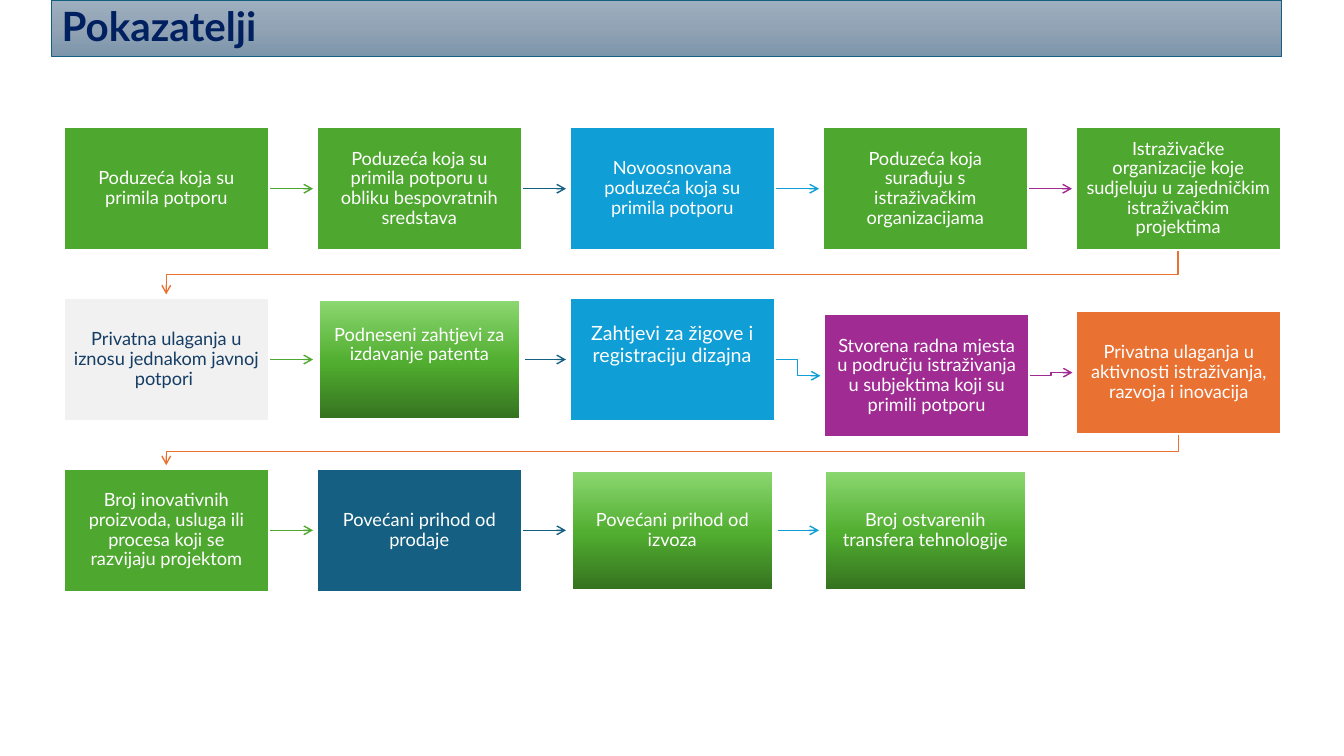
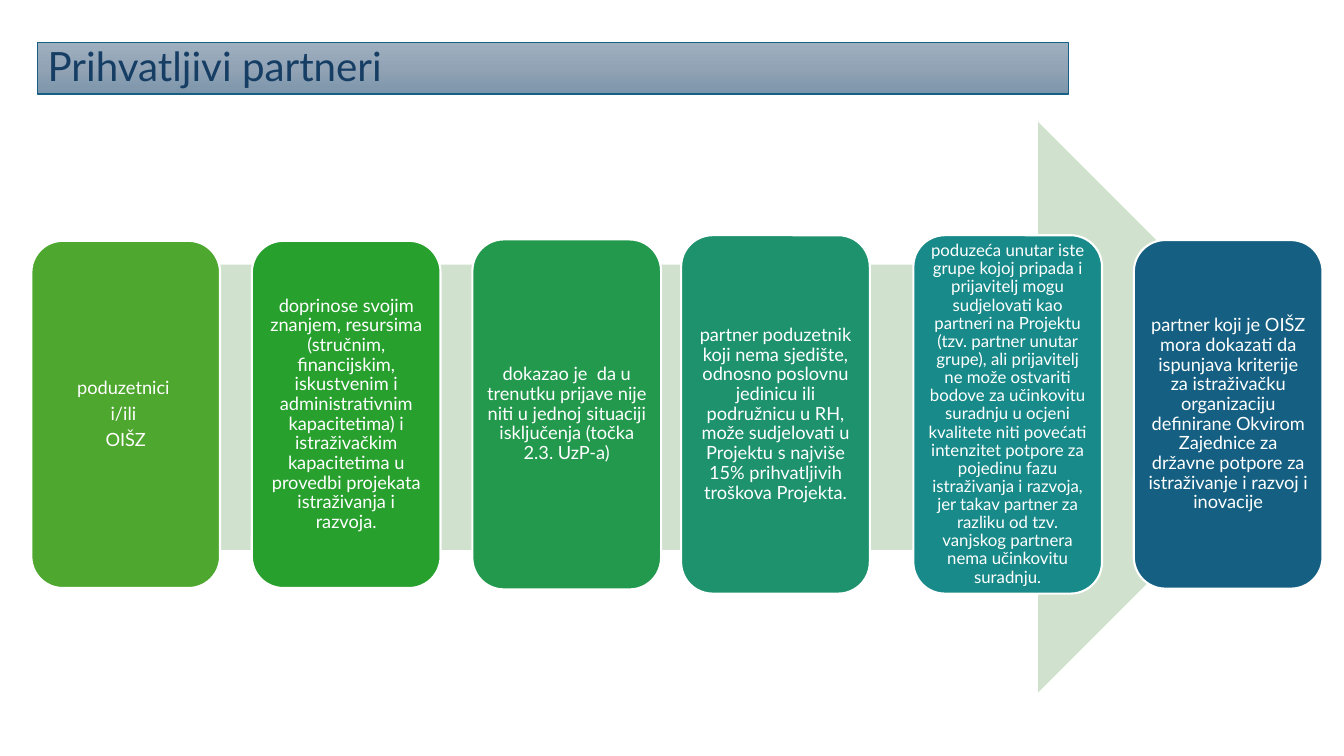
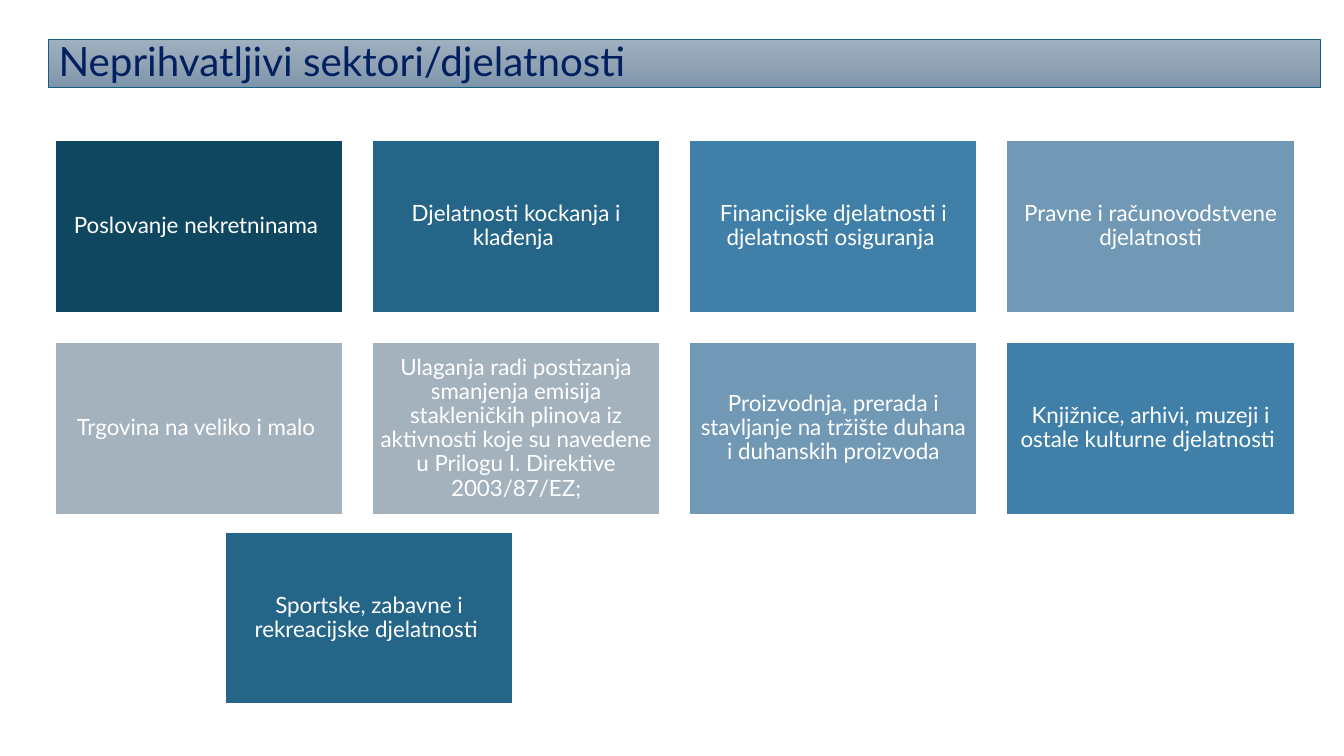
from dataclasses import dataclass

from lxml.etree import SubElement
from pptx import Presentation
from pptx.dml.color import RGBColor
from pptx.enum.shapes import MSO_CONNECTOR, MSO_SHAPE
from pptx.enum.text import MSO_ANCHOR, MSO_AUTO_SIZE, PP_ALIGN
from pptx.oxml.ns import qn
from pptx.util import Pt

FONT = "Lato"
WHITE, NAVY, DARK_BLUE = "FFFFFF", "002060", "163E64"
GREEN, BLUE, SKY = "4EA72E", "156082", "0F9ED5"
PURPLE, ORANGE, PALE = "A02B93", "E97132", "F1F1F1"

# Vertical gradients, listed from top to bottom
Gradient = tuple[tuple[int, str], ...]
TITLE_BAND: Gradient = ((0, "9EAFBF"), (50, "91A3B4"), (100, "7C95AB"))
LEAF: Gradient = ((0, "8ED973"), (52, "51AE30"), (100, "34701F"))


@dataclass(frozen=True)
class Frame:
    left: float
    top: float
    width: float
    height: float

    @property
    def right(self) -> float:
        return self.left + self.width

    @property
    def bottom(self) -> float:
        return self.top + self.height

    @property
    def center(self) -> float:
        return self.left + self.width / 2

    @property
    def middle(self) -> float:
        return self.top + self.height / 2

    def emu(self) -> tuple[Pt, Pt, Pt, Pt]:
        return Pt(self.left), Pt(self.top), Pt(self.width), Pt(self.height)


@dataclass(frozen=True)
class Box:
    text: str
    fill: str | Gradient
    size: float = 13
    ink: str = WHITE
    border: float = 1.5
    inset: float = 7.2
    lift: float = 0  # extra bottom inset that raises the text


@dataclass(frozen=True)
class Step:
    box: Box
    arrow: str | None
    dx: float = 0
    dy: float = 0


@dataclass(frozen=True)
class Card:
    text: str
    fill: str
    height: float
    size: float = 13
    dx: float = 0


def rgb(color: str) -> RGBColor:
    return RGBColor.from_string(color)


def paint(shape, fill: str | Gradient) -> None:
    if isinstance(fill, str):
        shape.fill.solid()
        shape.fill.fore_color.rgb = rgb(fill)
        return
    shape.fill.gradient()
    shape.fill.gradient_angle = 270
    stops = shape.element.spPr.find(".//" + qn("a:gsLst"))
    for stop in list(stops):
        stops.remove(stop)
    for position, color in fill:
        stop = SubElement(stops, qn("a:gs"), pos=str(position * 1000))
        SubElement(stop, qn("a:srgbClr"), val=color)


def outline(shape, color: str, width: float) -> None:
    shape.line.color.rgb = rgb(color)
    shape.line.width = Pt(width)


def write(shape, text: str, size: float, ink: str, align: PP_ALIGN,
          bold: bool = False) -> None:
    frame = shape.text_frame
    frame.word_wrap = True
    frame.auto_size = MSO_AUTO_SIZE.NONE
    frame.vertical_anchor = MSO_ANCHOR.MIDDLE
    for index, line in enumerate(text.split("\n")):
        paragraph = frame.add_paragraph() if index else frame.paragraphs[0]
        paragraph.alignment = align
        paragraph.line_spacing = 0.9
        paragraph.space_before = Pt(0)
        paragraph.space_after = Pt(round(size * 0.35, 2))
        run = paragraph.add_run()
        run.text = line
        run.font.name = FONT
        run.font.size = Pt(size)
        run.font.bold = bold
        run.font.color.rgb = rgb(ink)


def titled_slide(deck, text: str, band: Frame, ink: str = NAVY, bold: bool = False):
    slide = deck.slides.add_slide(deck.slide_layouts[5])
    title = slide.shapes.title
    title.left, title.top, title.width, title.height = band.emu()
    paint(title, TITLE_BAND)
    outline(title, BLUE, 1)
    write(title, text, 28.8, ink, PP_ALIGN.LEFT, bold)
    return slide


def draw_box(slide, box: Box, frame: Frame, kind: MSO_SHAPE = MSO_SHAPE.RECTANGLE):
    shape = slide.shapes.add_shape(kind, *frame.emu())
    shape.shadow.inherit = False
    paint(shape, box.fill)
    outline(shape, WHITE, box.border)
    text = shape.text_frame
    text.margin_left = text.margin_right = text.margin_top = Pt(box.inset)
    text.margin_bottom = Pt(box.inset + box.lift)
    write(shape, box.text, box.size, box.ink, PP_ALIGN.CENTER)
    return shape


def style_arrow(arrow, color: str) -> None:
    outline(arrow, color, 1)
    properties = arrow.element.spPr
    SubElement(properties.find(qn("a:ln")), qn("a:tailEnd"), type="arrow")
    SubElement(properties, qn("a:effectLst"))


ARROW_GAP = 2.5


def side_arrow(slide, start: Frame, end: Frame, color: str):
    """Arrow to the next box in the row, bent when the boxes are not level."""
    level = start.middle == end.middle
    kind = MSO_CONNECTOR.STRAIGHT if level else MSO_CONNECTOR.ELBOW
    arrow = slide.shapes.add_connector(
        kind, Pt(start.right), Pt(start.middle),
        Pt(end.left - ARROW_GAP), Pt(end.middle))
    style_arrow(arrow, color)
    return arrow if level else None


def wrap_arrow(slide, start: Frame, end: Frame, color: str) -> None:
    """Arrow from the end of one row to the start of the next."""
    tip = end.top - ARROW_GAP
    turn = start.bottom + 0.55 * (tip - start.bottom)
    route = slide.shapes.build_freeform(Pt(start.center), Pt(start.bottom))
    corners = ((start.center, turn), (end.center, turn), (end.center, tip))
    route.add_line_segments([(Pt(x), Pt(y)) for x, y in corners], close=False)
    arrow = route.convert_to_shape()
    arrow.fill.background()
    style_arrow(arrow, color)


# Slide 1: indicators
STEPS_PER_ROW = 5
STEPS = (
    Step(Box("Poduzeća koja su primila potporu", GREEN), GREEN),
    Step(Box("Poduzeća koja su primila potporu u obliku bespovratnih sredstava",
             GREEN), BLUE),
    Step(Box("Novoosnovana poduzeća koja su primila potporu", SKY), SKY),
    Step(Box("Poduzeća koja surađuju s istraživačkim organizacijama", GREEN), PURPLE),
    Step(Box("Istraživačke organizacije koje sudjeluju u zajedničkim "
             "istraživačkim projektima", GREEN), ORANGE),
    Step(Box("Privatna ulaganja u iznosu jednakom javnoj potpori ", PALE,
             ink=DARK_BLUE), GREEN),
    Step(Box("Podneseni zahtjevi za izdavanje patenta", LEAF, border=4.5, lift=20.5),
         BLUE),
    Step(Box("Zahtjevi za žigove i registraciju dizajna", SKY, size=14, lift=20.5),
         SKY),
    Step(Box("Stvorena radna mjesta u području istraživanja u subjektima koji su "
             "primili potporu", PURPLE), PURPLE, dx=1, dy=11.6),
    Step(Box("Privatna ulaganja u aktivnosti istraživanja, razvoja i inovacija",
             ORANGE), ORANGE, dx=0.4, dy=9.4),
    Step(Box("Broj inovativnih proizvoda, usluga ili procesa koji se razvijaju "
             "projektom", GREEN), GREEN),
    Step(Box("Povećani prihod od prodaje", BLUE), BLUE),
    Step(Box("Povećani prihod od izvoza", LEAF, border=4.5), SKY),
    Step(Box("Broj ostvarenih transfera tehnologije", LEAF, border=4.5), None),
)


def indicators(deck) -> None:
    slide = titled_slide(deck, "Pokazatelji", Frame(36.9, 0, 878.5, 40.5), bold=True)
    frames = []
    for index, step in enumerate(STEPS):
        row, column = divmod(index, STEPS_PER_ROW)
        frames.append(Frame(45.4 + 180.7 * column + step.dx,
                            90.8 + 122 * row + step.dy, 146.7, 88))
    for index, (step, frame) in enumerate(zip(STEPS, frames)):
        straight = None
        if step.arrow and (index + 1) % STEPS_PER_ROW:
            straight = side_arrow(slide, frame, frames[index + 1], step.arrow)
        elif step.arrow:
            wrap_arrow(slide, frame, frames[index + 1], step.arrow)
        shape = draw_box(slide, step.box, frame)
        if straight is not None:
            straight.begin_connect(shape, 3)


# Slide 2: eligible partners
CARDS = (
    Card("poduzetnici \ni/ili \nOIŠZ", GREEN, 248),
    Card("doprinose svojim znanjem, resursima (stručnim, financijskim, iskustvenim i "
         "administrativnim kapacitetima) i istraživačkim kapacitetima u provedbi "
         "projekata istraživanja i razvoja.", "28A02E", 248),
    Card("dokazao je  da u trenutku prijave nije niti u jednoj situaciji isključenja "
         "(točka 2.3. UzP-a)", "23994E", 250),
    Card("partner poduzetnik koji nema sjedište, odnosno poslovnu jedinicu ili "
         "podružnicu u RH, može sudjelovati u Projektu s najviše 15% prihvatljivih "
         "troškova Projekta.", "1E926D", 256, dx=-8.4),
    Card("poduzeća unutar iste grupe kojoj pripada i prijavitelj mogu sudjelovati kao "
         "partneri na Projektu (tzv. partner unutar grupe), ali prijavitelj ne može "
         "ostvariti bodove za učinkovitu suradnju u ocjeni kvalitete niti povećati "
         "intenzitet potpore za pojedinu fazu istraživanja i razvoja, jer takav "
         "partner za razliku od tzv. vanjskog partnera nema učinkovitu suradnju.",
         "198A8A", 256, size=12),
    Card("partner koji je OIŠZ mora dokazati da ispunjava kriterije za istraživačku "
         "organizaciju definirane Okvirom Zajednice za državne potpore za "
         "istraživanje i razvoj i inovacije", BLUE, 249),
)


def partners(deck) -> None:
    slide = titled_slide(deck, "Prihvatljivi partneri",
                         Frame(26.8, 30.4, 736.6, 36.7), ink=DARK_BLUE)
    backdrop = Frame(51.1, 87.2, 894.2, 407.5)
    arrow = slide.shapes.add_shape(MSO_SHAPE.RIGHT_ARROW, *backdrop.emu())
    arrow.shadow.inherit = False
    paint(arrow, "D0E1CD")
    arrow.line.fill.background()
    for column, card in enumerate(CARDS):
        frame = Frame(22.4 + 157.5 * column + card.dx, 296 - card.height / 2,
                      134.8, card.height)
        draw_box(slide, Box(card.text, card.fill, card.size, inset=3.6), frame,
                 MSO_SHAPE.ROUNDED_RECTANGLE)


# Slide 3: ineligible sectors
SECTORS_PER_ROW = 4
SECTORS = (
    ("Poslovanje nekretninama ", "104760"),
    ("Djelatnosti kockanja i klađenja ", "246588"),
    ("Financijske djelatnosti i djelatnosti osiguranja ", "4080A8"),
    ("Pravne i računovodstvene djelatnosti", "7198B4"),
    ("Trgovina na veliko i malo ", "A4B2BE"),
    ("Ulaganja radi postizanja smanjenja emisija stakleničkih plinova iz aktivnosti "
     "koje su navedene u Prilogu I. Direktive 2003/87/EZ;", "A4B2BE"),
    ("Proizvodnja, prerada i stavljanje na tržište duhana i duhanskih proizvoda",
     "7198B4"),
    ("Knjižnice, arhivi, muzeji i ostale kulturne djelatnosti ", "4080A8"),
    ("Sportske, zabavne i rekreacijske djelatnosti ", "246588"),
)
LAST_SECTOR = (160.6, 379.7)  # the single box below the grid


def sectors(deck) -> None:
    slide = titled_slide(deck, "Neprihvatljivi sektori/djelatnosti",
                         Frame(34.6, 28.2, 908.6, 34.4))
    places = [(39.1 + 226.6 * column, 99.8 + 144.4 * row)
              for row in range(2) for column in range(SECTORS_PER_ROW)]
    for (text, fill), (left, top) in zip(SECTORS, [*places, LAST_SECTOR]):
        draw_box(slide, Box(text, fill, 16, inset=4.8), Frame(left, top, 206, 123.6))


def main() -> None:
    deck = Presentation()
    deck.slide_width, deck.slide_height = Pt(960), Pt(540)
    indicators(deck)
    partners(deck)
    sectors(deck)
    deck.save("out.pptx")


if __name__ == "__main__":
    main()
